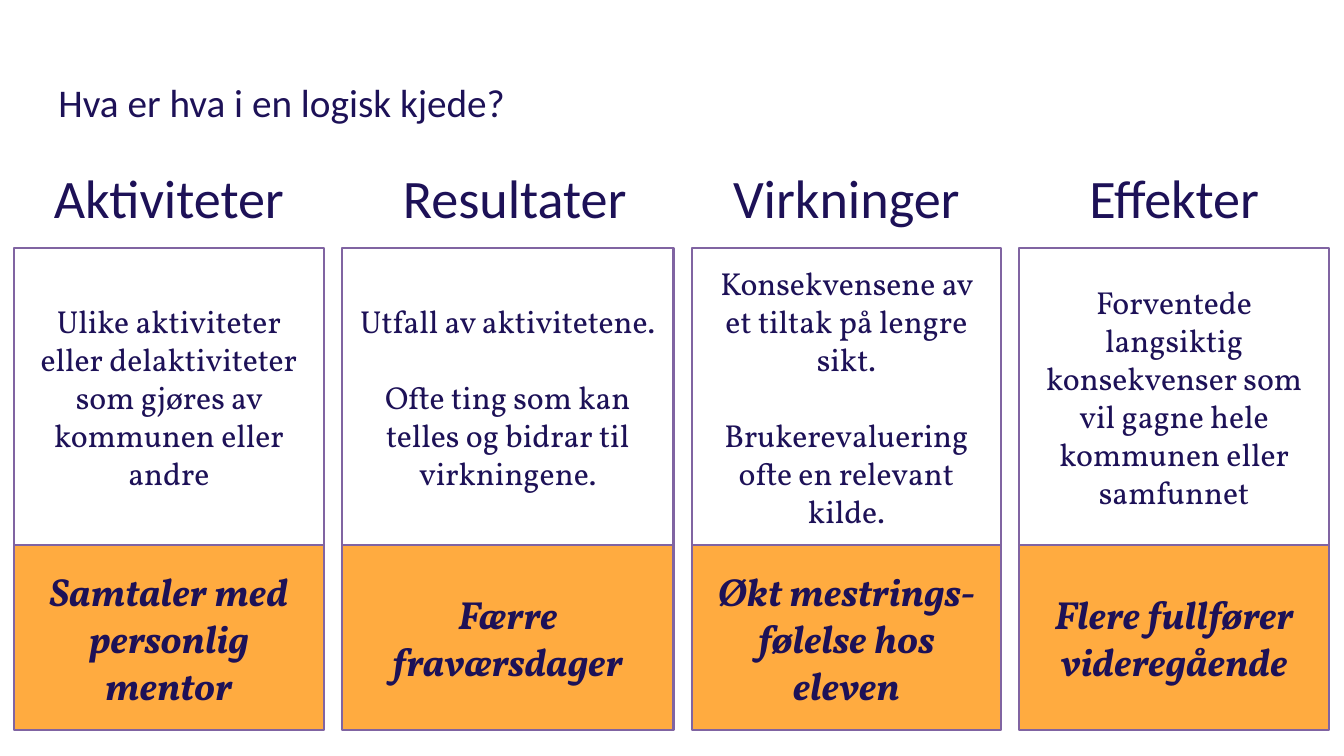
from pptx import Presentation, util as u
from pptx.dml.color import RGBColor
from pptx.enum import shapes, text

PX = 9144  # 100 px to the inch
INK = {"text": "1D1157", "edge": "8064A2", "body": "FFFFFF", "case": "FFAB40"}
GAP = 18
CHAIN = [  # heading, heading shift, width, body paragraphs, example paragraphs
    ("Aktiviteter", 0, 307,
     ["Ulike aktiviteter eller delaktiviteter som gjøres av kommunen eller andre"],
     ["Samtaler med personlig mentor"]),
    ("Resultater", 7, 329,
     ["Utfall av aktivitetene.",
      "Ofte ting som kan telles og bidrar til virkningene."],
     ["Færre fraværsdager"]),
    ("Virkninger", 0, 307,
     ["Konsekvensene av et tiltak på lengre sikt.",
      "Brukerevaluering ofte en relevant kilde."],
     ["Økt mestrings-", "følelse hos eleven"]),
    ("Effekter", 0, 307,
     ["Forventede langsiktig konsekvenser som vil gagne hele kommunen eller samfunnet"],
     ["Flere fullfører videregående"]),
]


def color(name):
    return RGBColor.from_string(INK[name])


def scale(*box):
    return [n * PX for n in box]


def write(shape, lines, size, face, align, anchor, bold=False, gap=0):
    """Fill a shape with one paragraph per line, gap points apart."""
    frame = shape.text_frame
    frame.word_wrap = True
    frame.auto_size = text.MSO_AUTO_SIZE.NONE
    frame.vertical_anchor = anchor
    frame.margin_left = frame.margin_right = 13 * PX
    frame.margin_top = frame.margin_bottom = 13 * PX
    for i, line in enumerate(lines):
        para = frame.add_paragraph() if i else frame.paragraphs[0]
        para.alignment = align
        para.space_before = u.Pt(gap if i else 0)
        run = para.add_run()
        run.text = line
        font = run.font
        font.name, font.size = face, u.Pt(size)
        font.bold = font.italic = bold
        font.color.rgb = color("text")


def add_title(slide, box):
    title = slide.shapes.title
    title.left, title.top, title.width, title.height = scale(*box)
    write(title, ["Hva er hva i en logisk kjede?"], 28, "Calibri",
          text.PP_ALIGN.LEFT, text.MSO_ANCHOR.TOP)


def add_panel(slide, box, fill, lines, size, bold=False, gap=0):
    panel = slide.shapes.add_shape(shapes.MSO_SHAPE.RECTANGLE, *scale(*box))
    panel.shadow.inherit = False
    panel.fill.solid()
    panel.fill.fore_color.rgb = color(fill)
    panel.line.color.rgb = color("edge")
    panel.line.width = u.Pt(1.5)
    write(panel, lines, size, "Vollkorn", text.PP_ALIGN.CENTER,
          text.MSO_ANCHOR.MIDDLE, bold, gap)


def add_column(slide, box, head, shift, body, case):
    """Stack a heading, a definition and an example in the box."""
    x, y, w, h = box
    label = slide.shapes.add_textbox(*scale(x + shift, y, w, 92))
    write(label, [head], 38.7, "Calibri", text.PP_ALIGN.CENTER,
          text.MSO_ANCHOR.TOP)
    add_panel(slide, (x, y + 96, w, 295), "body", body, 22.7, gap=27)
    add_panel(slide, (x, y + 391, w, h - 391), "case", case, 28, bold=True)


def main():
    deck = Presentation()
    deck.slide_width, deck.slide_height = scale(1333, 750)
    slide = deck.slides.add_slide(deck.slide_layouts[5])
    add_title(slide, (45, 65, 1242, 84))
    x = 14
    for head, shift, width, body, case in CHAIN:
        add_column(slide, (x, 150, width, 574), head, shift, body, case)
        x += width + GAP
    deck.save("out.pptx")


if __name__ == "__main__":
    main()
